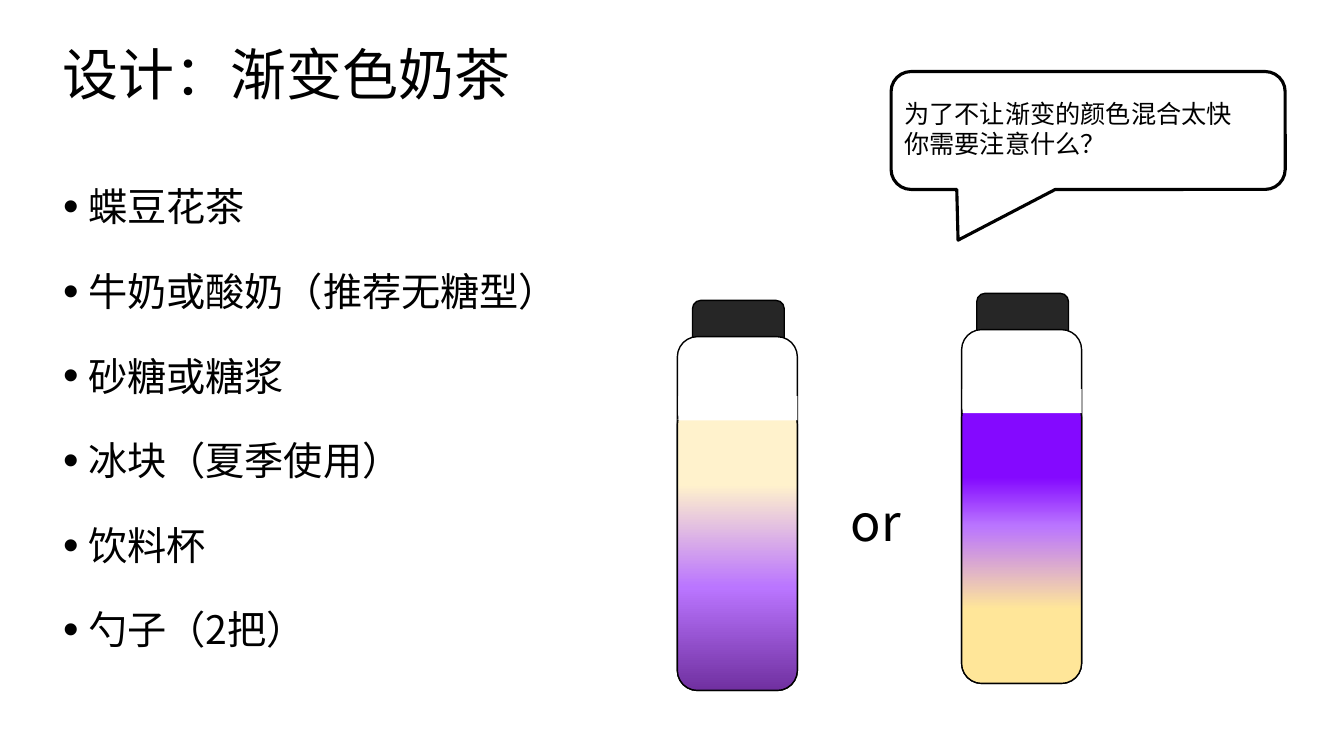
from dataclasses import dataclass

from lxml import etree
from pptx import Presentation
from pptx.dml.color import RGBColor
from pptx.enum.shapes import MSO_SHAPE
from pptx.enum.text import MSO_ANCHOR, MSO_AUTO_SIZE, PP_ALIGN
from pptx.oxml.ns import qn
from pptx.shapes.autoshape import Shape
from pptx.shapes.shapetree import GroupShapes, SlideShapes
from pptx.slide import Slide
from pptx.text.text import TextFrame
from pptx.util import Emu, Inches, Pt

ROUNDED = MSO_SHAPE.ROUNDED_RECTANGLE
RECTANGLE = MSO_SHAPE.RECTANGLE
CALLOUT = MSO_SHAPE.ROUNDED_RECTANGULAR_CALLOUT
MIDDLE = MSO_ANCHOR.MIDDLE
TOP = MSO_ANCHOR.TOP
LEFT = PP_ALIGN.LEFT
NO_AUTOFIT = MSO_AUTO_SIZE.NONE
GROW = MSO_AUTO_SIZE.SHAPE_TO_FIT_TEXT

BLACK = RGBColor(0x00, 0x00, 0x00)
WHITE = RGBColor(0xFF, 0xFF, 0xFF)
CAP_GREY = RGBColor(0x26, 0x26, 0x26)
DEEP_PURPLE = RGBColor(0x70, 0x30, 0xA0)
LILAC = RGBColor(0xBA, 0x75, 0xFF)
VIOLET = RGBColor(0x84, 0x09, 0xFF)
CREAM = RGBColor(0xFF, 0xF2, 0xCC)
CUSTARD = RGBColor(0xFF, 0xE6, 0x99)

FONT = "Noto Sans CJK SC"
SLIDE_WIDTH = Inches(40 / 3)
SLIDE_HEIGHT = Inches(7.5)
COLUMN = SLIDE_WIDTH / 40
ROW = SLIDE_HEIGHT / 30
UPWARD = 270

INGREDIENTS = [
    "蝶豆花茶",
    "牛奶或酸奶（推荐无糖型）",
    "砂糖或糖浆",
    "冰块（夏季使用）",
    "饮料杯",
    "勺子（2把）",
]


@dataclass(frozen=True)
class Area:
    column: float
    row: float
    columns: float
    rows: float

    def within(self, column: float, row: float) -> "Area":
        return Area(column + self.column, row + self.row, self.columns, self.rows)

    def lengths(self) -> tuple[Emu, Emu, Emu, Emu]:
        return (
            Emu(round(self.column * COLUMN)),
            Emu(round(self.row * ROW)),
            Emu(round(self.columns * COLUMN)),
            Emu(round(self.rows * ROW)),
        )


@dataclass(frozen=True)
class Stop:
    percent: int
    color: RGBColor


@dataclass(frozen=True)
class Bottle:
    column: float
    row: float
    stops: tuple[Stop, ...]


CAP = Area(1.08, -2.28, 1.47, 3.64)
GLASS = Area(0, 0, 3.57, 14.04)
DRINK = Area(0, 2.68, 3.57, 11.36)
SURFACE = Area(0.03, 2.36, 3.54, 0.96)

BOTTLES = [
    Bottle(20.16, 13.36, (Stop(0, DEEP_PURPLE), Stop(36, LILAC), Stop(72, CREAM))),
    Bottle(28.62, 13.08, (Stop(26, CUSTARD), Stop(55, LILAC), Stop(72, VIOLET))),
]


def add_box(
    shapes: SlideShapes | GroupShapes,
    kind: MSO_SHAPE,
    area: Area,
    fill: RGBColor | None,
    line_width: float,
) -> Shape:
    box = shapes.add_shape(kind, *area.lengths())
    box.shadow.inherit = False
    if fill is None:
        box.fill.background()
    else:
        box.fill.solid()
        box.fill.fore_color.rgb = fill
    if line_width:
        box.line.color.rgb = BLACK
        box.line.width = Pt(line_width)
    else:
        box.line.fill.background()
    return box


def fill_gradient(box: Shape, stops: tuple[Stop, ...]) -> None:
    box.fill.gradient()
    box.fill.gradient_angle = 360 - UPWARD
    stop_list = box._element.spPr.find(qn("a:gradFill")).find(qn("a:gsLst"))
    for old_stop in list(stop_list):
        stop_list.remove(old_stop)
    for stop in stops:
        node = etree.SubElement(stop_list, qn("a:gs"), pos=str(stop.percent * 1000))
        etree.SubElement(node, qn("a:srgbClr"), val=str(stop.color))


def add_bottle(slide: Slide, bottle: Bottle) -> None:
    shapes = slide.shapes.add_group_shape().shapes
    place = (bottle.column, bottle.row)
    cap = add_box(shapes, ROUNDED, CAP.within(*place), CAP_GREY, 1)
    cap.rotation = 270
    add_box(shapes, ROUNDED, GLASS.within(*place), WHITE, 1)
    drink = add_box(shapes, ROUNDED, DRINK.within(*place), WHITE, 1)
    fill_gradient(drink, bottle.stops)
    add_box(shapes, RECTANGLE, SURFACE.within(*place), WHITE, 0)


def format_text(frame: TextFrame, size: float) -> None:
    for para in frame.paragraphs:
        para.alignment = LEFT
        for span in para.runs:
            span.font.size = Pt(size)
            span.font.name = FONT
            span.font.color.rgb = BLACK
            east_asian = etree.Element(qn("a:ea"), typeface=FONT)
            span.font._element.find(qn("a:latin")).addnext(east_asian)


def add_text(slide: Slide, area: Area, text: str, size: float, wrap: bool) -> TextFrame:
    frame = slide.shapes.add_textbox(*area.lengths()).text_frame
    frame.word_wrap = wrap
    frame.auto_size = NO_AUTOFIT if wrap else GROW
    frame.vertical_anchor = TOP
    frame.text = text
    format_text(frame, size)
    return frame


def add_title(slide: Slide, area: Area, text: str) -> None:
    title = slide.shapes.title
    title.left, title.top, title.width, title.height = area.lengths()
    frame = title.text_frame
    frame.text = text
    frame.word_wrap = True
    frame.auto_size = NO_AUTOFIT
    frame.vertical_anchor = MIDDLE
    frame.paragraphs[0].line_spacing = 0.9
    format_text(frame, 40)


def add_ingredients(slide: Slide, area: Area) -> None:
    frame = add_text(slide, area, "\n".join(INGREDIENTS), 28, True)
    for index, para in enumerate(frame.paragraphs):
        properties = para._p.get_or_add_pPr()
        properties.set("marL", str(Inches(0.25)))
        properties.set("indent", str(-Inches(0.25)))
        etree.SubElement(properties, qn("a:buSzPct"), val="113000")
        etree.SubElement(properties, qn("a:buFont"), typeface="Arial")
        etree.SubElement(properties, qn("a:buChar"), char="•")
        para.line_spacing = 1.5
        para.space_before = Pt(10 if index else 0)


def main() -> None:
    deck = Presentation()
    deck.slide_width, deck.slide_height = SLIDE_WIDTH, SLIDE_HEIGHT
    page = deck.slides.add_slide(deck.slide_layouts[5])
    add_title(page, Area(1.56, 1.1, 37.05, 3.92), "设计：渐变色奶茶")
    add_ingredients(page, Area(1.58, 6.12, 18.24, 22.36))
    callout = add_box(page.shapes, CALLOUT, Area(26.52, 2.84, 11.73, 4.68), None, 2.25)
    for index, value in enumerate((-0.33, 0.93, 0.17)):
        callout.adjustments[index] = value
    question = "为了不让渐变的颜色混合太快\n你需要注意什么？"
    add_text(page, Area(26.62, 3.7, 10.44, 2.84), question, 18, False)
    for bottle in BOTTLES:
        add_bottle(page, bottle)
    add_text(page, Area(25.02, 19.28, 2.13, 2.84), "or", 36, False)
    deck.save("out.pptx")


if __name__ == "__main__":
    main()
